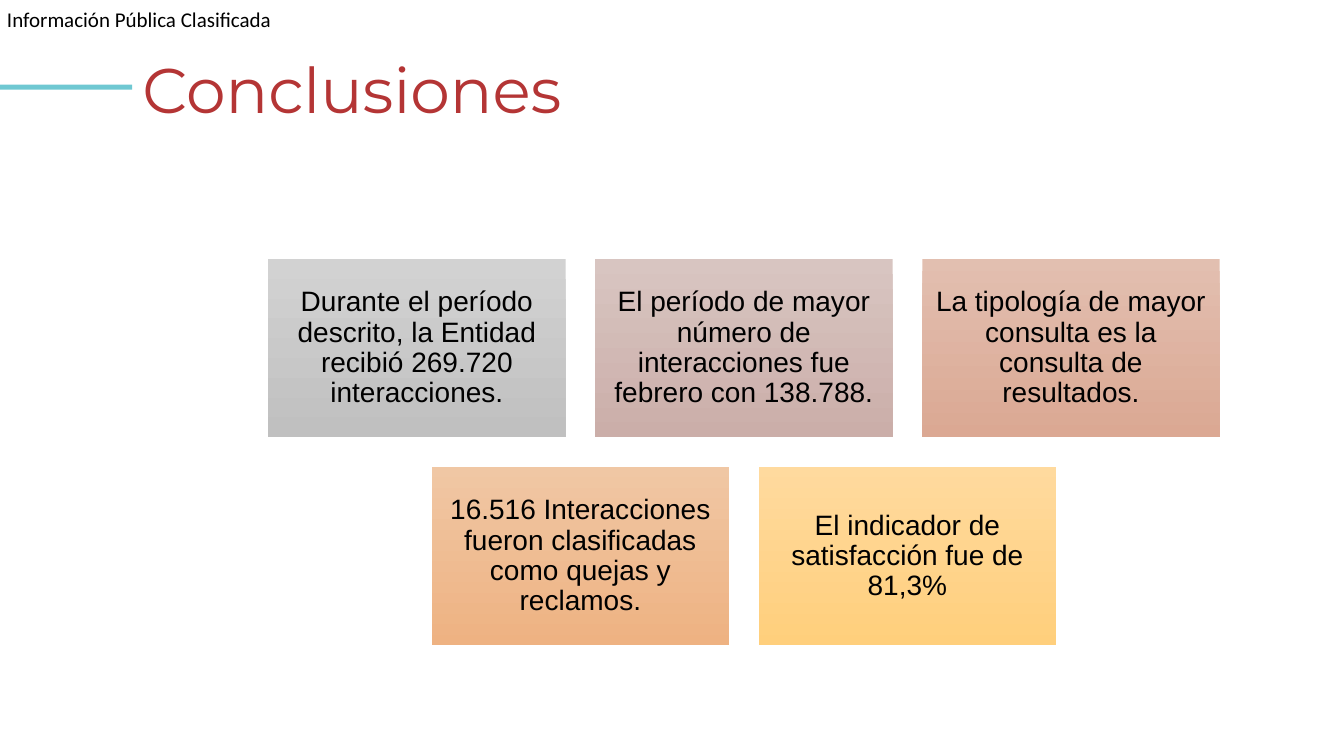
import pptx
import pptx.util
import pptx.dml.color
import pptx.enum.shapes
import pptx.enum.text

Pt = pptx.util.Pt
ALIGN = pptx.enum.text.PP_ALIGN
ANCHOR = pptx.enum.text.MSO_ANCHOR
RECT = pptx.enum.shapes.MSO_SHAPE.RECTANGLE

COLORS = {
    "text": "000000",
    "title": "B43535",
    "accent": "6FC8D2",
}

# Each row of cards: text, top color, bottom color
ROWS = [
    [
        ("Durante el período descrito, la Entidad recibió 269.720 interacciones.",
         "D2D2D2", "C0C0C0"),
        ("El período de mayor número de interacciones fue febrero con 138.788.",
         "D8C5C1", "CBAEA9"),
        ("La tipología de mayor consulta es la consulta de resultados.",
         "E2BFB0", "DBA893"),
    ],
    [
        ("16.516 Interacciones fueron clasificadas como quejas y reclamos.",
         "F0C7A4", "EEB282"),
        ("El indicador de satisfacción fue de 81,3%",
         "FFDA9E", "FFCF7C"),
    ],
]

CARD_W, CARD_H, GAP = 212.4, 127.4, 21.2
MID_X, CARDS_TOP = 535.68, 185


def rgb(code):
    return pptx.dml.color.RGBColor.from_string(code)


def set_text(shape, text, font, size, color, align, inset):
    frame = shape.text_frame
    frame.text = text
    frame.word_wrap = True
    frame.margin_left = frame.margin_right = Pt(inset)
    frame.margin_top = frame.margin_bottom = Pt(inset)
    para = frame.paragraphs[0]
    para.alignment = align
    style = para.runs[0].font
    style.name, style.size = font, Pt(size)
    style.color.rgb = rgb(color)
    return frame


def add_rect(slide, left, top, width, height):
    """Add a rectangle without line or shadow."""
    rect = slide.shapes.add_shape(RECT, Pt(left), Pt(top), Pt(width), Pt(height))
    rect.shadow.inherit = False
    rect.line.fill.background()
    return rect


def add_label(slide):
    box = slide.shapes.add_textbox(Pt(5), Pt(5), Pt(193), Pt(18))
    set_text(box, "Información Pública Clasificada", "Calibri", 15,
             COLORS["text"], ALIGN.LEFT, 0)


def add_bar(slide):
    bar = add_rect(slide, 0, 60.5, 94.5, 3.6)
    bar.fill.solid()
    bar.fill.fore_color.rgb = rgb(COLORS["accent"])


def set_title(slide):
    title = slide.shapes.title
    title.left, title.top = Pt(94.5), Pt(35.3)
    title.width, title.height = Pt(607), Pt(59)
    frame = set_text(title, "Conclusiones", "Montserrat", 45,
                     COLORS["title"], ALIGN.LEFT, 3.6)
    frame.margin_left = frame.margin_right = Pt(7.2)
    frame.vertical_anchor = ANCHOR.TOP
    frame.auto_size = pptx.enum.text.MSO_AUTO_SIZE.NONE
    frame.paragraphs[0].line_spacing = Pt(51)


def add_card(slide, left, top, text, light, dark):
    card = add_rect(slide, left, top, CARD_W, CARD_H)
    card.fill.gradient()
    card.fill.gradient_angle = 270
    for stop, color in zip(card.fill.gradient_stops, (light, dark)):
        stop.color.rgb = rgb(color)
    frame = set_text(card, text, "Arial", 20, COLORS["text"], ALIGN.CENTER, 6)
    frame.vertical_anchor = ANCHOR.MIDDLE
    frame.paragraphs[0].line_spacing = 0.9


def add_cards(slide):
    """Lay out the rows of cards, each centred on the same axis."""
    for row, cards in enumerate(ROWS):
        span = len(cards) * (CARD_W + GAP) - GAP
        left = MID_X - 4.3 - span / 2
        top = CARDS_TOP + row * (CARD_H + GAP)
        for col, card in enumerate(cards):
            add_card(slide, left + col * (CARD_W + GAP), top, *card)


def main():
    deck = pptx.Presentation()
    deck.slide_width, deck.slide_height = Pt(960), Pt(540)
    slide = deck.slides.add_slide(deck.slide_layouts[5])
    add_label(slide)
    add_bar(slide)
    set_title(slide)
    add_cards(slide)
    deck.save("out.pptx")


if __name__ == "__main__":
    main()
